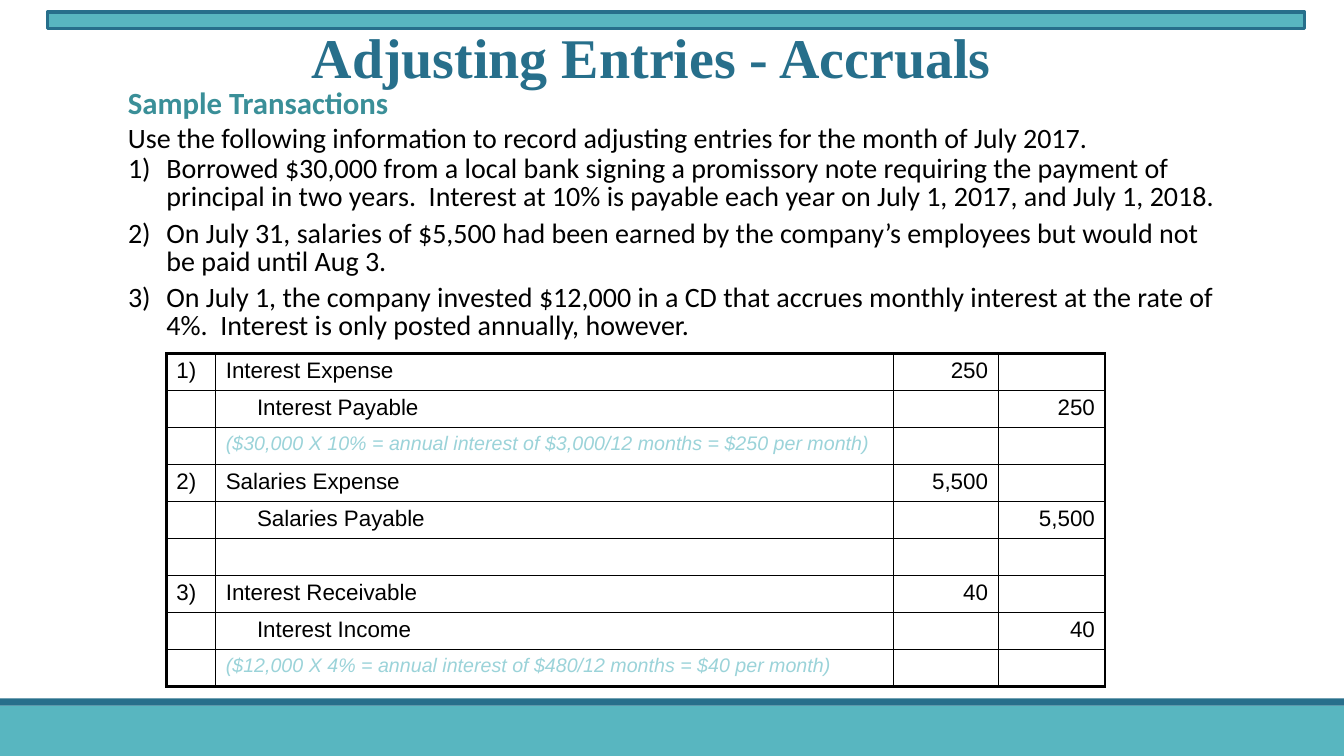
from lxml.etree import SubElement
from pptx import Presentation
from pptx.dml.color import RGBColor
from pptx.enum.shapes import MSO_SHAPE
from pptx.enum.text import MSO_ANCHOR, MSO_AUTO_SIZE, PP_ALIGN
from pptx.oxml.ns import qn
from pptx.util import Inches, Pt

COLORS = {"teal": "58B6C0", "blue": "276F8B", "heading": "3A8F98",
          "note": "9BD3D9", "text": "000000"}

TITLE = "Adjusting Entries - Accruals"
HEADING = "Sample Transactions"
INTRO = "Use the following information to record adjusting entries for the month of July 2017."
TRANSACTIONS = [
    "Borrowed $30,000 from a local bank signing a promissory note requiring the payment of "
    "principal in two years.  Interest at 10% is payable each year on July 1, 2017, and July 1, 2018.",
    "On July 31, salaries of $5,500 had been earned by the company’s employees but would not "
    "be paid until Aug 3.",
    "On July 1, the company invested $12,000 in a CD that accrues monthly interest at the rate of "
    "4%.  Interest is only posted annually, however.",
]
# Number, debit account, credit account, amount, explanation
ENTRIES = [
    ("1)", "Interest Expense", "Interest Payable", "250",
     "($30,000 X 10% = annual interest of $3,000/12 months = $250 per month)"),
    ("2)", "Salaries Expense", "Salaries Payable", "5,500", ""),
    ("3)", "Interest Receivable", "Interest Income", "40",
     "($12,000 X 4% = annual interest of $480/12 months = $40 per month)"),
]
COL_WIDTHS = [0.49, 6.72, 1.04, 1.06]
TABLE_LEFT, TABLE_TOP, TABLE_HEIGHT = 1.65, 3.51, 3.3

# Left, top, width, height, fill, outlined
BARS = [(0, 7, 13.33, 0.5, "teal", False),
        (0, 6.93, 13.33, 0.07, "blue", False),
        (0.47, 0.12, 12.47, 0.16, "teal", True)]

TITLE_FONT = {"name": "Times New Roman", "size": Pt(40), "bold": True}
HEADING_FONT = {"name": "Calibri", "size": Pt(22), "bold": True}
BODY_FONT = {"name": "Calibri", "size": Pt(20), "bold": False}
CELL_FONT = {"name": "Arial", "size": Pt(16), "bold": False, "italic": False}
NOTE_FONT = {**CELL_FONT, "size": Pt(14), "italic": True}


def rgb(name):
    return RGBColor.from_string(COLORS[name])


def add_run(p, text, fmt, color):
    r = p.add_run()
    r.text = text
    for key, value in fmt.items():
        setattr(r.font, key, value)
    r.font.color.rgb = rgb(color)


def place(shape, left, top, width, height):
    shape.left, shape.top = Inches(left), Inches(top)
    shape.width, shape.height = Inches(width), Inches(height)


def set_borders(cell, widths):
    tcPr = cell._tc.get_or_add_tcPr()
    for i, (side, width) in enumerate(widths.items()):
        ln = tcPr.makeelement(qn(f"a:{side}"), {"w": str(Pt(width))})
        fill = SubElement(ln, qn("a:solidFill"))
        SubElement(fill, qn("a:srgbClr"), val=COLORS["text"])
        tcPr.insert(i, ln)


prs = Presentation()
prs.slide_width, prs.slide_height = Inches(13.33), Inches(7.5)
s = prs.slides.add_slide(prs.slide_layouts[1])

# Bands at the top and bottom
for *box, fill, outlined in BARS:
    sp = s.shapes.add_shape(MSO_SHAPE.RECTANGLE, *map(Inches, box))
    sp.shadow.inherit = False
    sp.fill.solid()
    sp.fill.fore_color.rgb = rgb(fill)
    if outlined:
        sp.line.color.rgb = rgb("blue")
        sp.line.width = Pt(2.25)
    else:
        sp.line.fill.background()

# Title
title = s.shapes.title
place(title, 2.95, 0.13, 7.02, 0.85)
tf = title.text_frame
tf.auto_size, tf.word_wrap = MSO_AUTO_SIZE.NONE, False
tf.vertical_anchor = MSO_ANCHOR.MIDDLE
tf.paragraphs[0].alignment = PP_ALIGN.CENTER
add_run(tf.paragraphs[0], TITLE, TITLE_FONT, "blue")

# Heading and introduction
intro = s.shapes.add_textbox(Inches(1.17), Inches(0.78), Inches(11), Inches(0.81))
tf = intro.text_frame
tf.word_wrap = True
p = tf.paragraphs[0]
add_run(p, HEADING, HEADING_FONT, "heading")
p.add_line_break()
add_run(p, INTRO, BODY_FONT, "text")

# Numbered transactions
body = s.placeholders[1]
place(body, 1.17, 1.5, 11, 1.95)
tf = body.text_frame
tf.auto_size, tf.vertical_anchor = MSO_AUTO_SIZE.NONE, MSO_ANCHOR.TOP
for i, text in enumerate(TRANSACTIONS):
    p = tf.add_paragraph() if i else tf.paragraphs[0]
    p.line_spacing, p.space_before, p.space_after = Pt(20), Pt(0), Pt(6)
    pPr = p._p.get_or_add_pPr()
    pPr.set("marL", str(Inches(0.38)))
    pPr.set("indent", str(-Inches(0.38)))
    SubElement(pPr, qn("a:buFont"), typeface="+mj-lt")
    SubElement(pPr, qn("a:buAutoNum"), type="arabicParenR")
    add_run(p, text, BODY_FONT, "text")

# Journal: debit, credit and explanation rows for each entry
rows = []
for number, debit, credit, amount, note in ENTRIES:
    rows += [(number, debit, amount, ""), ("", credit, "", amount), ("", note, "", "")]
n_rows, n_cols = len(rows), len(COL_WIDTHS)
table = s.shapes.add_table(n_rows, n_cols, Inches(TABLE_LEFT), Inches(TABLE_TOP),
                           Inches(sum(COL_WIDTHS)), Inches(TABLE_HEIGHT)).table
table.first_row = table.horz_banding = False
for col, width in zip(table.columns, COL_WIDTHS):
    col.width = Inches(width)
for i, row in enumerate(rows):
    table.rows[i].height = Inches(TABLE_HEIGHT / n_rows)
    for j, text in enumerate(row):
        cell = table.cell(i, j)
        cell.fill.background()
        set_borders(cell, {"lnL": 2.25 if j == 0 else 1,
                           "lnR": 2.25 if j == n_cols - 1 else 1,
                           "lnT": 2.25 if i == 0 else 1,
                           "lnB": 2.25 if i == n_rows - 1 else 1})
        p = cell.text_frame.paragraphs[0]
        if j >= 2:
            p.alignment = PP_ALIGN.RIGHT
        if j == 1 and i % 3 == 1:
            p._p.get_or_add_pPr().set("marL", str(Inches(0.31)))
        if not text:
            SubElement(p._p, qn("a:endParaRPr"), sz="1600")
        elif i % 3 == 2:
            add_run(p, text, NOTE_FONT, "note")
        else:
            add_run(p, text, CELL_FONT, "text")

prs.save("out.pptx")
